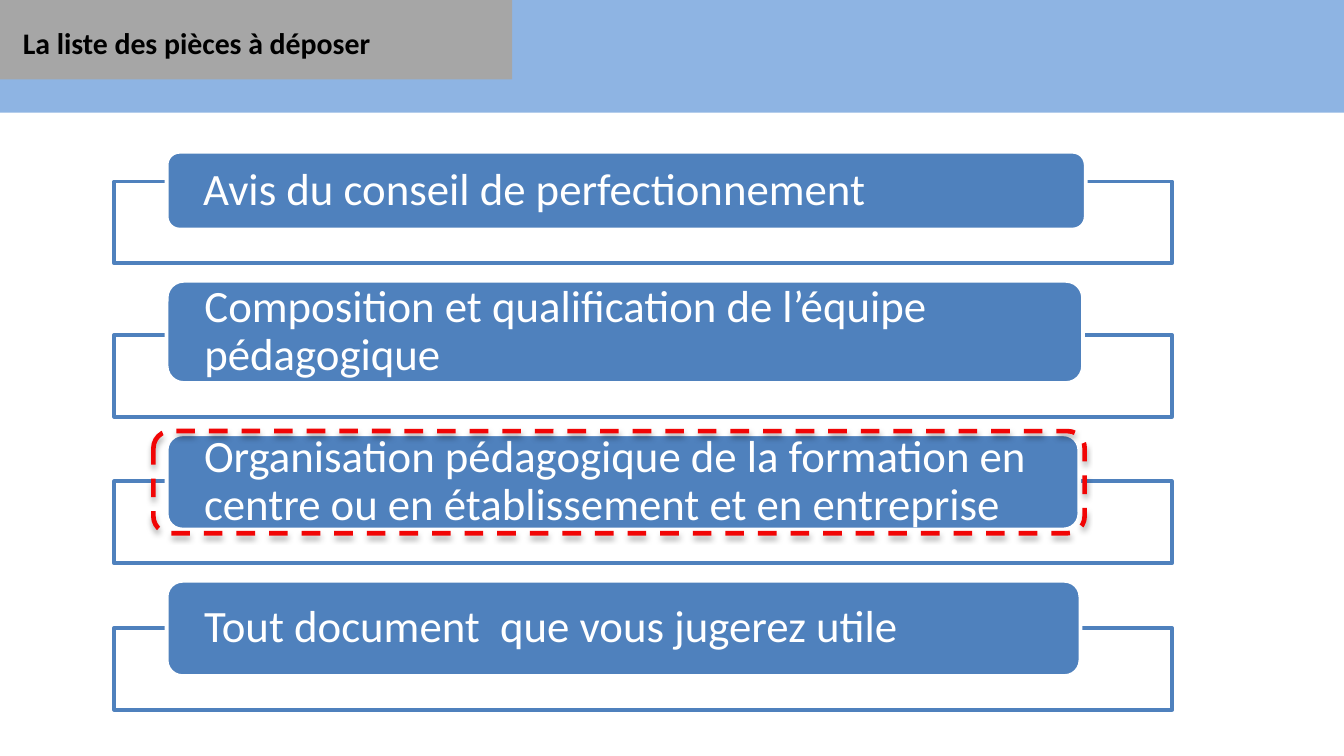
import pptx
import pptx.util
import pptx.oxml
import pptx.oxml.ns
import pptx.dml.color
import pptx.enum.dml
import pptx.enum.shapes
import pptx.enum.text

Cm = pptx.util.Cm
Pt = pptx.util.Pt
RGBColor = pptx.dml.color.RGBColor
MSO_SHAPE = pptx.enum.shapes.MSO_SHAPE
MSO_ANCHOR = pptx.enum.text.MSO_ANCHOR

BLACK = RGBColor(0x00, 0x00, 0x00)
WHITE = RGBColor(0xFF, 0xFF, 0xFF)
SKY = RGBColor(0x8E, 0xB4, 0xE3)
GREY = RGBColor(0xA6, 0xA6, 0xA6)
BLUE = RGBColor(0x4F, 0x81, 0xBD)
RED = RGBColor(0xF1, 0x05, 0x05)
NS = pptx.oxml.ns.nsdecls("a")


def add_box(kind, x, y, w, h, fill=None, line=None, weight=2):
    """Add a preset shape without shadow; sizes in cm, line weight in points."""
    sp = s.shapes.add_shape(kind, Cm(x), Cm(y), Cm(w), Cm(h))
    sp.shadow.inherit = False
    if fill is None:
        sp.fill.background()
    else:
        sp.fill.solid()
        sp.fill.fore_color.rgb = fill
    if line is None:
        sp.line.fill.background()
    else:
        sp.line.color.rgb = line
        sp.line.width = Pt(weight)
    return sp


def write(sp, text, size, color, bold=False, anchor=MSO_ANCHOR.TOP,
          wrap=True, inset=0.25, inset_y=0.13, spacing=1.0):
    tf = sp.text_frame
    tf.word_wrap = wrap
    tf.vertical_anchor = anchor
    tf.margin_left = tf.margin_right = Cm(inset)
    tf.margin_top = tf.margin_bottom = Cm(inset_y)
    p = tf.paragraphs[0]
    p.alignment = pptx.enum.text.PP_ALIGN.LEFT
    p.line_spacing = spacing
    r = p.add_run()
    r.text = text
    r.font.name = "Calibri"
    r.font.size = Pt(size)
    r.font.bold = bold
    r.font.color.rgb = color


prs = pptx.Presentation()
prs.slide_width = Cm(25.4)
prs.slide_height = Cm(14.29)
s = prs.slides.add_slide(prs.slide_layouts[5])

# Header bands, with the title in front of them
add_box(MSO_SHAPE.RECTANGLE, 0, 0, 25.4, 2.13, fill=SKY)
add_box(MSO_SHAPE.RECTANGLE, 0, 0, 9.68, 1.5, fill=GREY)
title = s.shapes.title
title.left, title.top, title.width, title.height = Cm(0.18), Cm(0.33), Cm(7.16), Cm(0.94)
write(title, "La liste des pièces à déposer", 16, BLACK, bold=True, wrap=False)
title.text_frame.auto_size = pptx.enum.text.MSO_AUTO_SIZE.SHAPE_TO_FIT_TEXT
s.shapes._spTree.append(title._element)

# Documents: label, label width, label height
documents = [
    ("Avis du conseil de perfectionnement", 17.37, 1.47),
    ("Composition et qualification de l’équipe pédagogique", 17.32, 1.93),
    ("Organisation pédagogique de la formation en centre ou en établissement "
     "et en entreprise", 17.25, 1.8),
    ("Tout document  que vous jugerez utile", 17.27, 1.8),
]
FRAME_H, OVERLAP, GAP = 1.55, 0.91, 0.33
y = 2.87
for text, w, h in documents:
    frame_y = y + h - OVERLAP
    frame = add_box(MSO_SHAPE.RECTANGLE, 2.16, frame_y, 19.99, FRAME_H, WHITE, BLUE)
    color = frame._element.spPr.find(".//" + pptx.oxml.ns.qn("a:srgbClr"))
    color.append(pptx.oxml.parse_xml(f'<a:alpha {NS} val="90000"/>'))
    label = add_box(MSO_SHAPE.ROUNDED_RECTANGLE, 3.15, y, w, h, BLUE, WHITE)
    write(label, text, 24, WHITE, anchor=MSO_ANCHOR.MIDDLE,
          inset=0.62, inset_y=0.08, spacing=0.9)
    y = frame_y + FRAME_H + GAP

# Dashed highlight around the third document
highlight = add_box(MSO_SHAPE.ROUNDED_RECTANGLE, 2.9, 8.15, 17.6, 1.93, line=RED, weight=2.5)
highlight.line.dash_style = pptx.enum.dml.MSO_LINE.DASH
effects = highlight._element.spPr.find(pptx.oxml.ns.qn("a:effectLst"))
effects.append(pptx.oxml.parse_xml(
    f'<a:outerShdw {NS} blurRad="{Pt(3.1)}" dist="{Pt(1.8)}" dir="5400000" rotWithShape="0">'
    '<a:srgbClr val="000000"><a:alpha val="35000"/></a:srgbClr></a:outerShdw>'))

prs.save("out.pptx")
